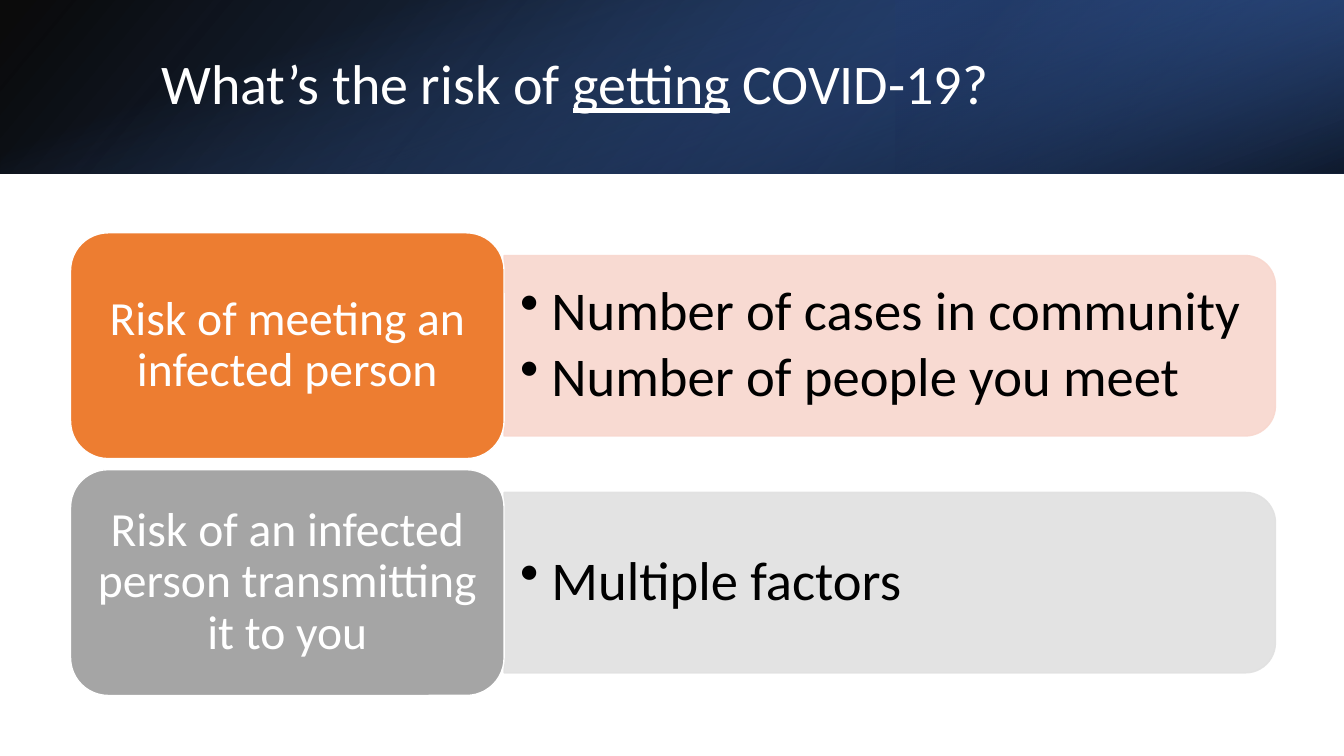
import pptx
import pptx.util
import pptx.dml.color
import pptx.enum.shapes
import pptx.enum.text
import pptx.oxml
import pptx.oxml.ns

Inches, Pt = pptx.util.Inches, pptx.util.Pt
RGBColor = pptx.dml.color.RGBColor
MSO_SHAPE = pptx.enum.shapes.MSO_SHAPE
MSO_ANCHOR = pptx.enum.text.MSO_ANCHOR
PP_ALIGN = pptx.enum.text.PP_ALIGN
qn = pptx.oxml.ns.qn

WHITE = RGBColor(0xFF, 0xFF, 0xFF)
BLACK = RGBColor(0, 0, 0)
ORANGE = RGBColor(0xED, 0x7D, 0x31)
PEACH = RGBColor(0xF8, 0xD7, 0xCE)
GREY = RGBColor(0xA5, 0xA5, 0xA5)
PALE_GREY = RGBColor(0xE1, 0xE1, 0xE1)
NAVY = RGBColor(0x2F, 0x55, 0x97)
DARK_NAVY = RGBColor(0x20, 0x38, 0x64)
BLUE = RGBColor(0x44, 0x72, 0xC4)

SLIDE_W, SLIDE_H, BANNER_H = 13.33, 7.5, 1.72

TITLE = [("What’s the risk of ", False), ("getting", True), (" COVID-19?", False)]
RISKS = [
    ("Risk of meeting an infected person", ORANGE, PEACH,
     ["Number of cases in community", "Number of people you meet"]),
    ("Risk of an infected person transmitting it to you", GREY, PALE_GREY,
     ["Multiple factors"]),
]
# box (left, top, width, height), rotation, flipped, angle, stops (position, colour, opacity)
BANNER_LAYERS = [
    ((0, 0, SLIDE_W, BANNER_H), 0, True, 140, [(0, BLACK, 96), (100, NAVY, 100)]),
    ((SLIDE_W * 2 / 3, 0, SLIDE_W / 3, BANNER_H), 180, True, 320,
     [(19, DARK_NAVY, 68), (100, BLUE, 79)]),
    (((SLIDE_W - BANNER_H) / 2, (BANNER_H - SLIDE_W) / 2, BANNER_H, SLIDE_W), 90, False, 340,
     [(23, BLUE, 0), (99, BLACK, 74)]),
]
LABEL_LEFT, LABEL_TOP, LABEL_W, LABEL_H, ROW_STEP = 0.7, 2.31, 4.3, 2.24, 2.35
BAR_W, BAR_H = 7.65, 1.79
BULLETS_W, BULLETS_H = 7.56, 1.61


def add_shape(slide, kind, box):
    sp = slide.shapes.add_shape(kind, *map(Inches, box))
    sp.shadow.inherit = False
    return sp


def fill_gradient(sp, angle, stops):
    """Gradient with see-through stops, angle in degrees clockwise."""
    stop_xml = "".join(
        f'<a:gs pos="{pos * 1000}"><a:srgbClr val="{color}">'
        f'<a:alpha val="{opacity * 1000}"/></a:srgbClr></a:gs>'
        for pos, color, opacity in stops)
    grad = pptx.oxml.parse_xml(
        f'<a:gradFill {pptx.oxml.ns.nsdecls("a")}><a:gsLst>{stop_xml}</a:gsLst>'
        f'<a:lin ang="{angle * 60000}" scaled="0"/></a:gradFill>')
    sp._element.spPr.find(qn("a:prstGeom")).addnext(grad)


def paint(sp, fill, line, opacity=100):
    sp.fill.solid()
    sp.fill.fore_color.rgb = fill
    sp.line.color.rgb = line
    sp.line.width = Pt(1)
    if opacity < 100:
        for color in sp._element.spPr.iter(qn("a:srgbClr")):
            color.makeelement(qn("a:alpha"))
            pptx.oxml.ns  # namespace map used by qn
            alpha = color.makeelement(qn("a:alpha"), {"val": str(opacity * 1000)})
            color.append(alpha)


def set_frame(tf, side, edge):
    tf.word_wrap = True
    tf.vertical_anchor = MSO_ANCHOR.MIDDLE
    tf.margin_left = tf.margin_right = Inches(side)
    tf.margin_top = tf.margin_bottom = Inches(edge)


def format_paragraph(p, size, color, align):
    p.alignment = align
    p.line_spacing = 0.9
    for r in p.runs:
        r.font.name = "Calibri"
        r.font.size = Pt(size)
        r.font.color.rgb = color


def add_bullet(p):
    pPr = p._p.get_or_add_pPr()
    pPr.set("marL", str(Inches(0.31)))
    pPr.set("indent", str(-Inches(0.31)))
    pPr.append(pPr.makeelement(qn("a:buChar"), {"char": "•"}))


def add_banner(slide):
    for box, rotation, flipped, angle, stops in BANNER_LAYERS:
        sp = add_shape(slide, MSO_SHAPE.RECTANGLE, box)
        sp.rotation = rotation
        if flipped:
            sp._element.spPr.find(qn("a:xfrm")).set("flipH", "1")
        fill_gradient(sp, angle, stops)
        sp.line.fill.background()


def add_title(slide):
    title = slide.shapes.title
    slide.shapes._spTree.append(title._element)  # in front of the banner
    title.left, title.top, title.width, title.height = map(Inches, (1.5, 0.38, 10.98, 0.96))
    set_frame(title.text_frame, 0.1, 0.05)
    p = title.text_frame.paragraphs[0]
    for text, underlined in TITLE:
        r = p.add_run()
        r.text = text
        r.font.underline = underlined
    format_paragraph(p, 40, WHITE, PP_ALIGN.LEFT)


def add_risk(slide, top, label, color, pale, factors):
    middle = top + LABEL_H / 2
    bar_left = LABEL_LEFT + LABEL_W

    # The bar is a tall shape turned a quarter, so its rounded end points right.
    bar = add_shape(slide, MSO_SHAPE.ROUND_2_SAME_RECTANGLE,
                    (bar_left + (BAR_W - BAR_H) / 2, middle - BAR_W / 2, BAR_H, BAR_W))
    bar.rotation = 90
    paint(bar, pale, pale, 90)

    bullets = slide.shapes.add_textbox(*map(Inches, (
        bar_left, middle - BULLETS_H / 2, BULLETS_W, BULLETS_H)))
    tf = bullets.text_frame
    set_frame(tf, 0.16, 0.08)
    tf.text = "\n".join(factors)
    for p in tf.paragraphs:
        p.level = 1
        format_paragraph(p, 39, BLACK, PP_ALIGN.LEFT)
        p.space_after = Pt(5)
        add_bullet(p)

    box = add_shape(slide, MSO_SHAPE.ROUNDED_RECTANGLE, (LABEL_LEFT, top, LABEL_W, LABEL_H))
    paint(box, color, WHITE)
    set_frame(box.text_frame, 0.14, 0.07)
    box.text_frame.text = label
    format_paragraph(box.text_frame.paragraphs[0], 34, WHITE, PP_ALIGN.CENTER)


def main():
    prs = pptx.Presentation()
    prs.slide_width, prs.slide_height = Inches(SLIDE_W), Inches(SLIDE_H)
    slide = prs.slides.add_slide(prs.slide_layouts[5])
    add_banner(slide)
    add_title(slide)
    for i, risk in enumerate(RISKS):
        add_risk(slide, LABEL_TOP + i * ROW_STEP, *risk)
    prs.save("out.pptx")


if __name__ == "__main__":
    main()
